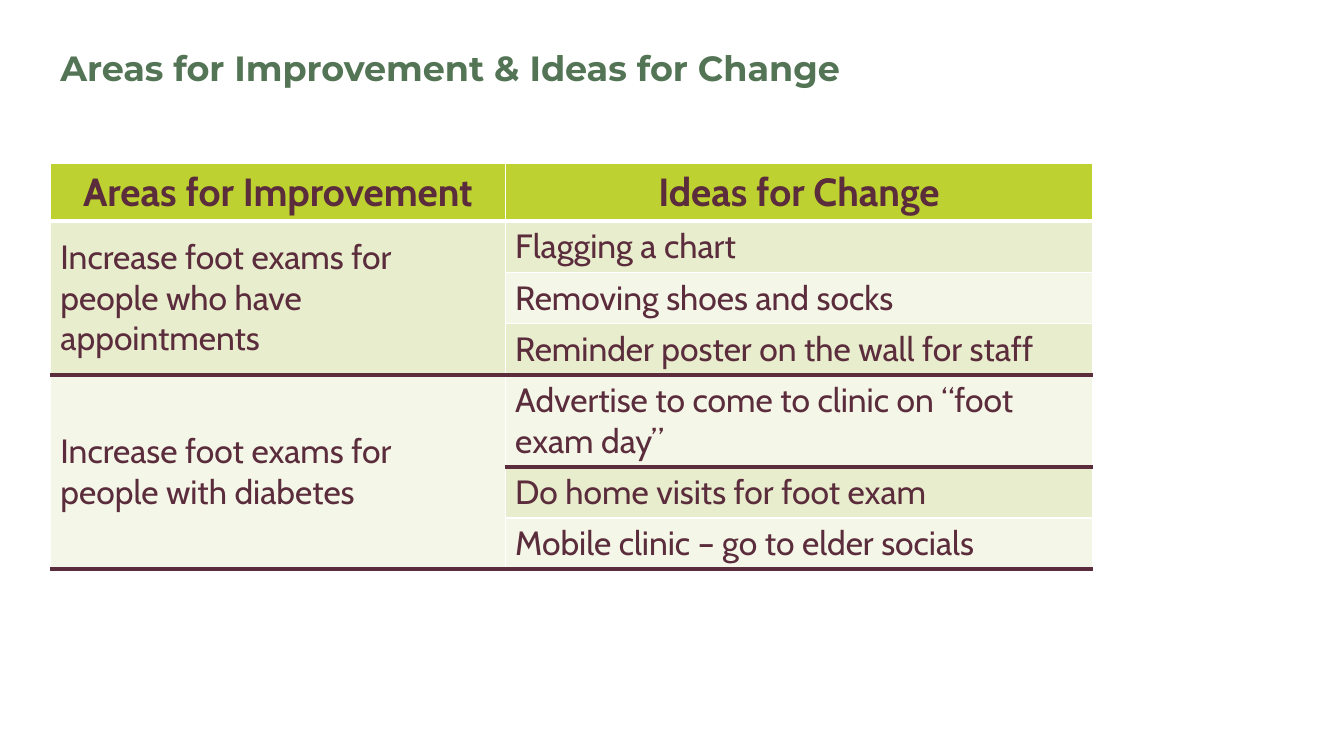
import pptx
import pptx.dml.color
import pptx.enum.text
import pptx.oxml
import pptx.oxml.ns
import pptx.util
from pptx.util import Cm

# Content
TITLE = "Areas for Improvement & Ideas for Change"
HEADINGS = ("Areas for Improvement", "Ideas for Change")
AREAS = [
    ("Increase foot exams for people who have appointments",
     ["Flagging a chart", "Removing shoes and socks", "Reminder poster on the wall for staff"]),
    ("Increase foot exams for people with diabetes",
     ["Advertise to come to clinic on “foot exam day”", "Do home visits for foot exam",
      "Mobile clinic – go to elder socials"]),
]
TWO_LINE_ROW = 4
RULED_ROWS = {3, 4, 6}  # rows with a dark rule below the idea

THEME = {
    "title_font": "Montserrat", "body_font": "Cabin",
    "title_size": 25, "heading_size": 28, "body_size": 24,
    "title": "547555", "ink": "5B2C3C", "heading_fill": "BDD230",
    "bands": ("E8EECD", "F4F7E8"), "grid": "FFFFFF",
}
THIN, THICK = (THEME["grid"], 1), (THEME["ink"], 3)
HEADING_RULE = (THEME["grid"], 3)

# Geometry
LEFT, TABLE_TOP = Cm(1.27), Cm(4.12)
COLUMN_WIDTHS = (Cm(11.46), Cm(14.81))
HEADING_HEIGHT, LINE_HEIGHT, TWO_LINE_HEIGHT = Cm(1.43), Cm(1.29), Cm(2.32)


def color(key):
    return pptx.dml.color.RGBColor.from_string(key)


def style(paragraph, font, size, ink, bold):
    paragraph.font.name = font
    paragraph.font.size = pptx.util.Pt(size)
    paragraph.font.color.rgb = color(ink)
    paragraph.font.bold = bold


def paint(cell, fill, top=THIN, bottom=THIN):
    cell.fill.solid()
    cell.fill.fore_color.rgb = color(fill)
    sides = (("L", THIN), ("R", THIN), ("T", top), ("B", bottom))
    for position, (side, (ink, points)) in enumerate(sides):
        line = pptx.oxml.parse_xml(
            f'<a:ln{side} {pptx.oxml.ns.nsdecls("a")} w="{pptx.util.Pt(points)}">'
            f'<a:solidFill><a:srgbClr val="{ink}"/></a:solidFill></a:ln{side}>')
        cell._tc.get_or_add_tcPr().insert(position, line)


def write(cell, text, size, bold=False):
    cell.text = text
    cell.vertical_anchor = pptx.enum.text.MSO_ANCHOR.MIDDLE
    style(cell.text_frame.paragraphs[0], THEME["body_font"], size, THEME["ink"], bold)


def add_title(slide):
    title = slide.shapes.add_textbox(LEFT, Cm(1.07), Cm(25.2), Cm(1.27)).text_frame
    title.word_wrap = True
    title.vertical_anchor = pptx.enum.text.MSO_ANCHOR.MIDDLE
    title.text = TITLE
    style(title.paragraphs[0], THEME["title_font"], THEME["title_size"], THEME["title"], True)


def add_plan(slide):
    row_count = 1 + sum(len(ideas) for _, ideas in AREAS)
    heights = [HEADING_HEIGHT] + [LINE_HEIGHT] * (row_count - 1)
    heights[TWO_LINE_ROW] = TWO_LINE_HEIGHT
    plan = slide.shapes.add_table(row_count, len(HEADINGS), LEFT, TABLE_TOP,
                                  sum(COLUMN_WIDTHS), sum(heights)).table
    for column, width in zip(plan.columns, COLUMN_WIDTHS):
        column.width = width
    for row, height in zip(plan.rows, heights):
        row.height = height

    # Heading row
    for column, heading in enumerate(HEADINGS):
        cell = plan.cell(0, column)
        write(cell, heading, THEME["heading_size"], True)
        cell.text_frame.paragraphs[0].alignment = pptx.enum.text.PP_ALIGN.CENTER
        paint(cell, THEME["heading_fill"], bottom=HEADING_RULE)

    # One merged area beside its ideas
    first = 1
    for group, (area, ideas) in enumerate(AREAS):
        last = first + len(ideas) - 1
        area_top = THICK if group else HEADING_RULE
        for row, idea in enumerate(ideas, first):
            above = HEADING_RULE if row == 1 else THICK if row - 1 in RULED_ROWS else THIN
            below = THICK if row in RULED_ROWS else THIN
            idea_cell = plan.cell(row, 1)
            write(idea_cell, idea, THEME["body_size"])
            paint(idea_cell, THEME["bands"][(row - 1) % 2], above, below)
            paint(plan.cell(row, 0), THEME["bands"][group],
                  area_top if row == first else THIN,
                  THICK if row in (first, last) else THIN)
        plan.cell(first, 0).merge(plan.cell(last, 0))
        write(plan.cell(first, 0), area, THEME["body_size"])
        first = last + 1


def main():
    deck = pptx.Presentation()
    deck.slide_width, deck.slide_height = Cm(33.87), Cm(19.05)
    slide = deck.slides.add_slide(deck.slide_layouts[6])
    add_plan(slide)
    add_title(slide)
    deck.save("out.pptx")


if __name__ == "__main__":
    main()
